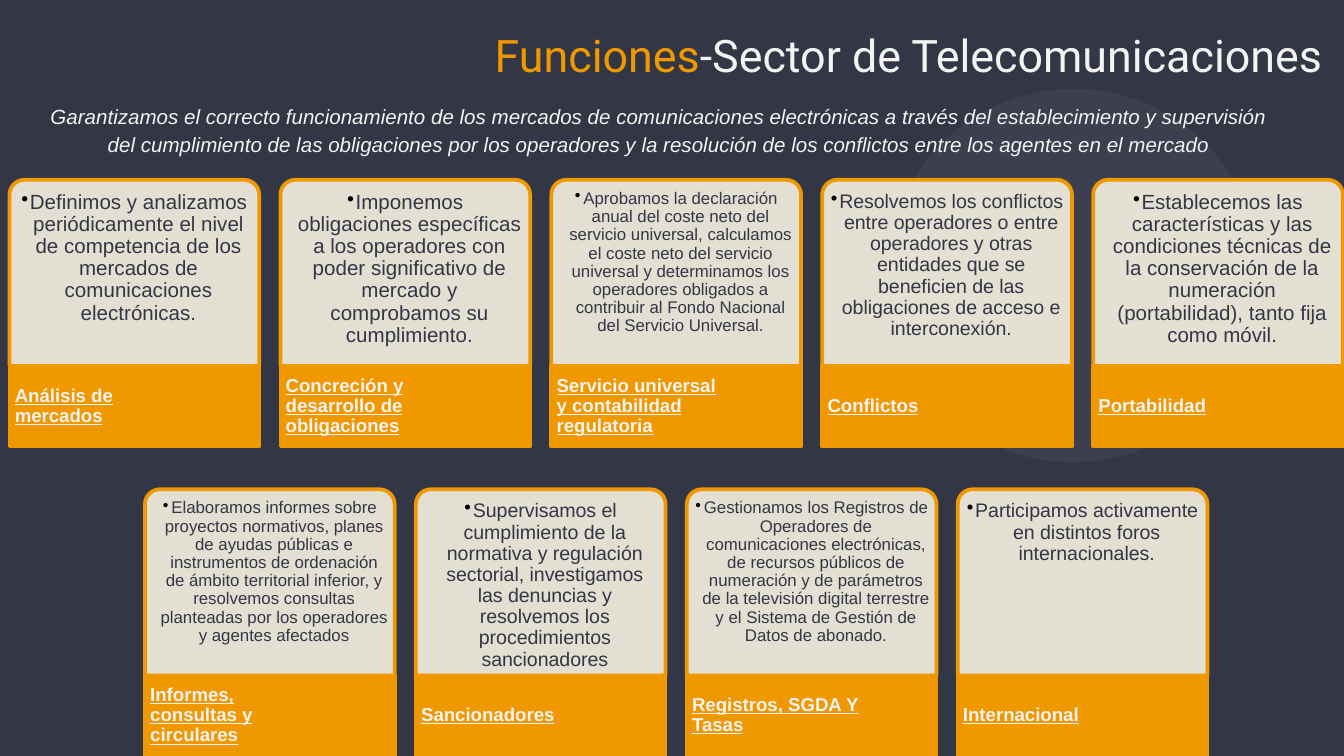
from dataclasses import dataclass

from lxml import etree
from pptx import Presentation
from pptx import util as u
from pptx.dml.color import RGBColor
from pptx.enum import shapes, text
from pptx.oxml.ns import qn
from pptx.shapes.autoshape import Shape
from pptx.slide import Slide
from pptx.text.text import TextFrame, _Paragraph

NIGHT = RGBColor(0x33, 0x36, 0x44)
HALO = RGBColor(0x3C, 0x3F, 0x4E)
ORANGE = RGBColor(0xF0, 0x98, 0x00)
CREAM = RGBColor(0xF7, 0xF2, 0xE2)
PALE = RGBColor(0xF3, 0xF3, 0xF3)

CARD_WIDTH, BODY_HEIGHT, LABEL_HEIGHT = 4.72, 3.52, 1.52
CARD_PITCH = 5.12
TEXT_INSET = 0.09
LABEL_TEXT_WIDTH = 3.33
BULLET_INDENT = 0.16


@dataclass(frozen=True)
class Card:
    label: str
    duty: str
    size: float


@dataclass(frozen=True)
class Row:
    left: float
    top: float
    cards: tuple[Card, ...]


ROWS = (
    Row(0.18, 3.4, (
        Card("Análisis de mercados",
             "Definimos y analizamos periódicamente el nivel de competencia de los "
             "mercados de comunicaciones electrónicas.", 11),
        Card("Concreción y desarrollo de obligaciones",
             "Imponemos obligaciones específicas a los operadores con poder "
             "significativo de mercado y comprobamos su cumplimiento.", 11),
        Card("Servicio universal y contabilidad regulatoria",
             "Aprobamos la declaración anual del coste neto del servicio universal, "
             "calculamos el coste neto del servicio universal y determinamos los "
             "operadores obligados a contribuir al Fondo Nacional del Servicio "
             "Universal.", 9),
        Card("Conflictos",
             "Resolvemos los conflictos entre operadores o entre operadores y otras "
             "entidades que se beneficien de las obligaciones de acceso e "
             "interconexión.", 10.5),
        Card("Portabilidad",
             "Establecemos las características y las condiciones técnicas de la "
             "conservación de la numeración (portabilidad), tanto fija como móvil.", 11),
    )),
    Row(2.74, 9.25, (
        Card("Informes, consultas y circulares",
             "Elaboramos informes sobre proyectos normativos, planes de ayudas "
             "públicas e instrumentos de ordenación de ámbito territorial inferior, y "
             "resolvemos consultas planteadas por los operadores y agentes afectados", 9),
        Card("Sancionadores",
             "Supervisamos el cumplimiento de la normativa y regulación sectorial, "
             "investigamos las denuncias y resolvemos los procedimientos "
             "sancionadores", 10.5),
        Card("Registros, SGDA Y Tasas",
             "Gestionamos los Registros de Operadores de comunicaciones electrónicas, "
             "de recursos públicos de numeración y de parámetros de la televisión "
             "digital terrestre y el Sistema de Gestión de Datos de abonado.", 9),
        Card("Internacional",
             "Participamos activamente en distintos foros internacionales.", 10.5),
    )),
)


def add_panel(slide: Slide, preset: shapes.MSO_SHAPE, left: float, top: float,
              width: float, height: float, fill: RGBColor,
              outline: RGBColor | None = None) -> Shape:
    panel = slide.shapes.add_shape(preset, u.Cm(left), u.Cm(top), u.Cm(width), u.Cm(height))
    panel.shadow.inherit = False
    panel.fill.solid()
    panel.fill.fore_color.rgb = fill
    if outline is None:
        panel.line.fill.background()
    else:
        panel.line.color.rgb = outline
        panel.line.width = u.Pt(2)
    return panel


def add_text_area(slide: Slide, left: float, top: float, width: float, height: float,
                  insets: tuple[float, float, float, float]) -> TextFrame:
    """Add a wrapping text box; insets run left, top, right, bottom."""
    frame = slide.shapes.add_textbox(u.Cm(left), u.Cm(top), u.Cm(width), u.Cm(height)).text_frame
    frame.word_wrap = True
    (frame.margin_left, frame.margin_top,
     frame.margin_right, frame.margin_bottom) = map(u.Cm, insets)
    return frame


def style(paragraph: _Paragraph, size: float, color: RGBColor, face: str = "Arial") -> None:
    paragraph.font.name = face
    paragraph.font.size = u.Pt(size)
    paragraph.font.color.rgb = color


def set_opacity(panel: Shape, percent: int) -> None:
    color = panel.fill._xPr.find(qn("a:solidFill"))[0]
    etree.SubElement(color, qn("a:alpha"), val=str(percent * 1000))


def add_bullet(paragraph: _Paragraph) -> None:
    properties = paragraph._p.get_or_add_pPr()
    indent = u.Cm(BULLET_INDENT)
    properties.set("marL", str(indent))
    properties.set("indent", str(-indent))
    bullet_color = etree.SubElement(properties, qn("a:buClr"))
    etree.SubElement(bullet_color, qn("a:srgbClr"), val="000000")
    etree.SubElement(properties, qn("a:buChar"), char="•")


def add_card(slide: Slide, card: Card, left: float, top: float) -> None:
    body = add_panel(slide, shapes.MSO_SHAPE.ROUND_2_SAME_RECTANGLE, left, top,
                     CARD_WIDTH, BODY_HEIGHT, CREAM, ORANGE)
    body.adjustments[0] = 0.08
    set_opacity(body, 90)
    inset = 0.02 if card.size < 10 else 0.05
    duty = add_text_area(slide, left + TEXT_INSET, top + TEXT_INSET,
                         CARD_WIDTH - 2 * TEXT_INSET, BODY_HEIGHT - TEXT_INSET,
                         (inset, inset + 0.08, inset, inset)).paragraphs[0]
    duty.text = card.duty
    duty.alignment = text.PP_ALIGN.CENTER
    duty.line_spacing = 0.9
    add_bullet(duty)
    style(duty, card.size, NIGHT)

    label_top = top + BODY_HEIGHT
    add_panel(slide, shapes.MSO_SHAPE.RECTANGLE, left, label_top,
              CARD_WIDTH, LABEL_HEIGHT, ORANGE, ORANGE)
    label_area = add_text_area(slide, left, label_top, LABEL_TEXT_WIDTH, LABEL_HEIGHT,
                               (0.1, 0, 0.03, 0))
    label_area.vertical_anchor = text.MSO_ANCHOR.MIDDLE
    label = label_area.paragraphs[0]
    label.text = card.label
    label.line_spacing = 0.9
    style(label, 10, PALE)
    label.font.bold = True
    label.font.underline = True


def add_heading(slide: Slide) -> None:
    title = add_text_area(slide, 7.77, 0.28, 18.8, 1.83, (0.25,) * 4).paragraphs[0]
    title.alignment = text.PP_ALIGN.CENTER
    style(title, 24, PALE, "Roboto")
    for words, color in (("Funciones", ORANGE), ("-Sector de Telecomunicaciones", PALE)):
        run = title.add_run()
        run.text = words
        run.font.color.rgb = color

    mission = add_text_area(slide, 0.23, 1.65, 24.03, 1.7, (0.25,) * 4).paragraphs[0]
    mission.text = (
        "Garantizamos el correcto funcionamiento de los mercados de comunicaciones "
        "electrónicas a través del establecimiento y supervisión del cumplimiento de las "
        "obligaciones por los operadores y la resolución de los conflictos entre los "
        "agentes en el mercado")
    mission.alignment = text.PP_ALIGN.CENTER
    mission.line_spacing = 1.15
    mission._p.get_or_add_pPr().set("marL", str(u.Cm(0.43)))
    style(mission, 11, PALE)
    mission.font.italic = True


def main() -> None:
    deck = Presentation()
    deck.slide_width, deck.slide_height = u.Cm(25.4), u.Cm(14.29)
    slide = deck.slides.add_slide(deck.slide_layouts[6])
    slide.background.fill.solid()
    slide.background.fill.fore_color.rgb = NIGHT
    for left, top, diameter in ((16.76, 1.68, 7.06), (14.35, 10.31, 2.21)):
        add_panel(slide, shapes.MSO_SHAPE.OVAL, left, top, diameter, diameter, HALO)
    add_heading(slide)
    for row in ROWS:
        for column, card in enumerate(row.cards):
            add_card(slide, card, row.left + column * CARD_PITCH, row.top)
    deck.save("out.pptx")


if __name__ == "__main__":
    main()
